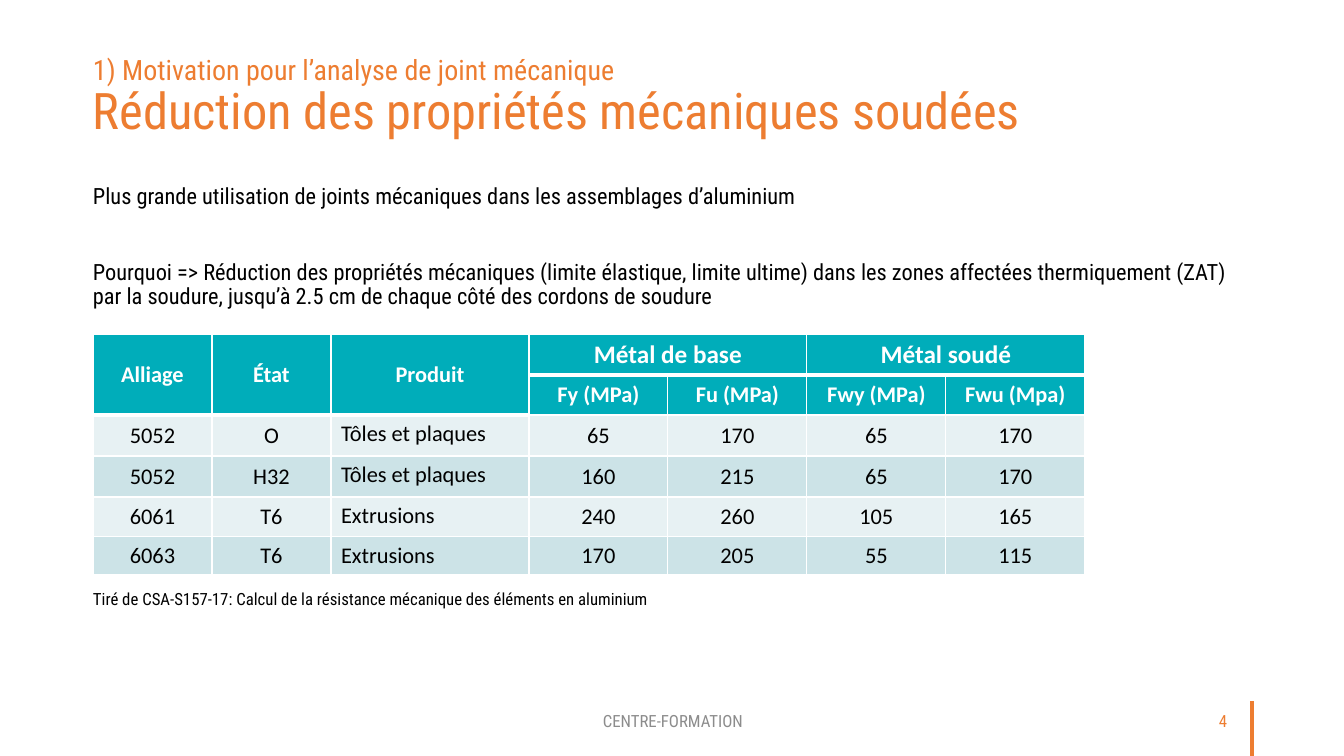
"""Build the slide on reduced mechanical properties of welded aluminium."""
from dataclasses import dataclass

from lxml.etree import SubElement
from pptx import Presentation
from pptx.dml.color import RGBColor
from pptx.enum.shapes import MSO_CONNECTOR
from pptx.enum.text import MSO_ANCHOR, MSO_AUTO_SIZE, PP_ALIGN
from pptx.oxml.ns import qn
from pptx.slide import Slide
from pptx.table import _Cell
from pptx.text.text import TextFrame, _Paragraph
from pptx.util import Emu, Pt

EMU_PER_INCH = 914400
PX_PER_INCH = 100.8
ORANGE = RGBColor(0xED, 0x7D, 0x31)
GREY = RGBColor(0x8C, 0x8C, 0x8C)
BLACK = RGBColor(0, 0, 0)
WHITE = RGBColor(0xFF, 0xFF, 0xFF)
TEAL = RGBColor(0x00, 0xAD, 0xBA)
BANDS = (RGBColor(0xE7, 0xF1, 0xF3), RGBColor(0xCC, 0xE3, 0xE7))
SLIDE_FONT = "Roboto Condensed"
TABLE_FONT = "Calibri"

COLUMN_WIDTHS = [119, 119, 198] + [139] * 4
ROW_HEIGHTS = [41, 40, 41, 41, 40, 38]
HEADER_ROWS = 2
PRODUCT_COLUMN = 2
TABLE_ROWS = [
    ["Alliage", "État", "Produit", "Métal de base", "", "Métal soudé", ""],
    ["", "", "", "Fy (MPa)", "Fu (MPa)", "Fwy (MPa)", "Fwu (Mpa)"],
    ["5052", "O", "Tôles et plaques", "65", "170", "65", "170"],
    ["5052", "H32", "Tôles et plaques", "160", "215", "65", "170"],
    ["6061", "T6", "Extrusions", "240", "260", "105", "165"],
    ["6063", "T6", "Extrusions", "170", "205", "55", "115"],
]
MERGES = [((0, column), (1, column)) for column in range(3)] + [
    ((0, column), (0, column + 1)) for column in (3, 5)
]


@dataclass(frozen=True)
class FooterLabel:
    text: str
    left: int
    width: int
    color: RGBColor
    alignment: PP_ALIGN


@dataclass(frozen=True)
class BodyParagraph:
    text: str
    size: int
    space_before: int


FOOTER_LABELS = [
    FooterLabel("CENTRE-FORMATION", 446, 454, GREY, PP_ALIGN.CENTER),
    FooterLabel("4", 1104, 133, ORANGE, PP_ALIGN.RIGHT),
]
BODY_PARAGRAPHS = [
    BodyParagraph("Plus grande utilisation de joints mécaniques dans les assemblages d’aluminium", 16, 0),
    BodyParagraph(
        "Pourquoi => Réduction des propriétés mécaniques (limite élastique, limite ultime) "
        "dans les zones affectées thermiquement (ZAT) par la soudure, "
        "jusqu’à 2.5 cm de chaque côté des cordons de soudure", 16, 37),
    BodyParagraph("Tiré de CSA-S157-17: Calcul de la résistance mécanique des éléments en aluminium", 12, 201),
]


def px(length: int) -> Emu:
    """Convert pixels to EMU."""
    return Emu(round(length * EMU_PER_INCH / PX_PER_INCH))


def box(left: int, top: int, width: int, height: int) -> tuple[Emu, Emu, Emu, Emu]:
    """Convert a rectangle in pixels to EMU."""
    return px(left), px(top), px(width), px(height)


def add_run(paragraph: _Paragraph, text: str, size: int, color: RGBColor,
            font_name: str = SLIDE_FONT, bold: bool = False) -> None:
    """Add one formatted run to a paragraph."""
    run = paragraph.add_run()
    run.text = text
    run.font.name = font_name
    run.font.size = Pt(size)
    run.font.bold = bold
    run.font.color.rgb = color


def set_frame(frame: TextFrame, anchor: MSO_ANCHOR, inset: bool) -> None:
    """Set wrapping, anchor and insets of a text frame."""
    frame.word_wrap = True
    frame.auto_size = MSO_AUTO_SIZE.NONE
    frame.vertical_anchor = anchor
    if not inset:
        frame.margin_left = frame.margin_right = 0
        frame.margin_top = frame.margin_bottom = 0


def add_title(slide: Slide) -> None:
    """Fill the title placeholder with its two lines."""
    title = slide.shapes.title
    title.left, title.top, title.width, title.height = box(93, 56, 1083, 102)
    set_frame(title.text_frame, MSO_ANCHOR.TOP, inset=False)
    paragraph = title.text_frame.paragraphs[0]
    paragraph.alignment = PP_ALIGN.LEFT
    paragraph.line_spacing = 0.9
    add_run(paragraph, "1) Motivation pour l’analyse de joint mécanique", 20, ORANGE)
    paragraph.add_line_break()
    add_run(paragraph, "Réduction des propriétés mécaniques soudées", 36, ORANGE)


def add_body(slide: Slide) -> None:
    """Add the explanation and the source of the table."""
    frame = slide.shapes.add_textbox(*box(93, 185, 1159, 446)).text_frame
    set_frame(frame, MSO_ANCHOR.TOP, inset=False)
    for index, item in enumerate(BODY_PARAGRAPHS):
        paragraph = frame.add_paragraph() if index else frame.paragraphs[0]
        paragraph.line_spacing = 0.9
        paragraph.space_before = Pt(item.space_before)
        add_run(paragraph, item.text, item.size, BLACK)


def add_footer(slide: Slide) -> None:
    """Add the footer labels and the orange rule."""
    for label in FOOTER_LABELS:
        shape = slide.shapes.add_textbox(*box(label.left, 701, label.width, 40))
        set_frame(shape.text_frame, MSO_ANCHOR.MIDDLE, inset=True)
        paragraph = shape.text_frame.paragraphs[0]
        paragraph.alignment = label.alignment
        add_run(paragraph, label.text, 12, label.color)
    rule = slide.shapes.add_connector(MSO_CONNECTOR.STRAIGHT, px(1252), px(756), px(1252), px(701))
    rule.line.color.rgb = ORANGE
    rule.line.width = Pt(2.25)
    SubElement(rule._element.spPr, qn("a:effectLst"))


def bottom_width(row: int, column: int) -> int:
    """Return the width in points of the border under a cell."""
    is_thick = row == 0 or (row == 1 and column <= PRODUCT_COLUMN)
    return 3 if is_thick else 1


def set_borders(cell: _Cell, top: int, bottom: int) -> None:
    """Draw white borders around a cell."""
    properties = cell._tc.get_or_add_tcPr()
    for tag, width in (("lnL", 1), ("lnR", 1), ("lnT", top), ("lnB", bottom)):
        line = SubElement(properties, qn(f"a:{tag}"), w=str(Pt(width)))
        fill = SubElement(line, qn("a:solidFill"))
        SubElement(fill, qn("a:srgbClr"), val=str(WHITE))


def format_cell(cell: _Cell, row: int, column: int) -> None:
    """Format one cell and write its text."""
    is_header = row < HEADER_ROWS
    is_product = column == PRODUCT_COLUMN and not is_header
    is_last = row == len(TABLE_ROWS) - 1
    set_borders(cell, bottom_width(row - 1, column) if row else 1, bottom_width(row, column))
    cell.fill.solid()
    cell.fill.fore_color.rgb = TEAL if is_header else BANDS[row % 2]
    cell.vertical_anchor = MSO_ANCHOR.TOP if is_product and not is_last else MSO_ANCHOR.MIDDLE
    text = TABLE_ROWS[row][column]
    if text:
        paragraph = cell.text_frame.paragraphs[0]
        paragraph.alignment = PP_ALIGN.LEFT if is_product else PP_ALIGN.CENTER
        size = 18 if row == 0 and column > PRODUCT_COLUMN else 16
        add_run(paragraph, text, size, WHITE if is_header else BLACK, TABLE_FONT, is_header)


def add_property_table(slide: Slide) -> None:
    """Add the table of base and welded metal properties."""
    frame = slide.shapes.add_table(
        len(ROW_HEIGHTS), len(COLUMN_WIDTHS), *box(93, 334, sum(COLUMN_WIDTHS), sum(ROW_HEIGHTS)))
    table = frame.table
    for column, width in zip(table.columns, COLUMN_WIDTHS):
        column.width = px(width)
    for row, height in zip(table.rows, ROW_HEIGHTS):
        row.height = px(height)
    for first, last in MERGES:
        table.cell(*first).merge(table.cell(*last))
    for row in range(len(ROW_HEIGHTS)):
        for column in range(len(COLUMN_WIDTHS)):
            format_cell(table.cell(row, column), row, column)


def main() -> None:
    """Build and save the presentation."""
    presentation = Presentation()
    presentation.slide_width = px(1344)
    presentation.slide_height = px(756)
    slide = presentation.slides.add_slide(presentation.slide_layouts.get_by_name("Title Only"))
    add_footer(slide)
    add_body(slide)
    add_title(slide)
    add_property_table(slide)
    presentation.save("out.pptx")


if __name__ == "__main__":
    main()
